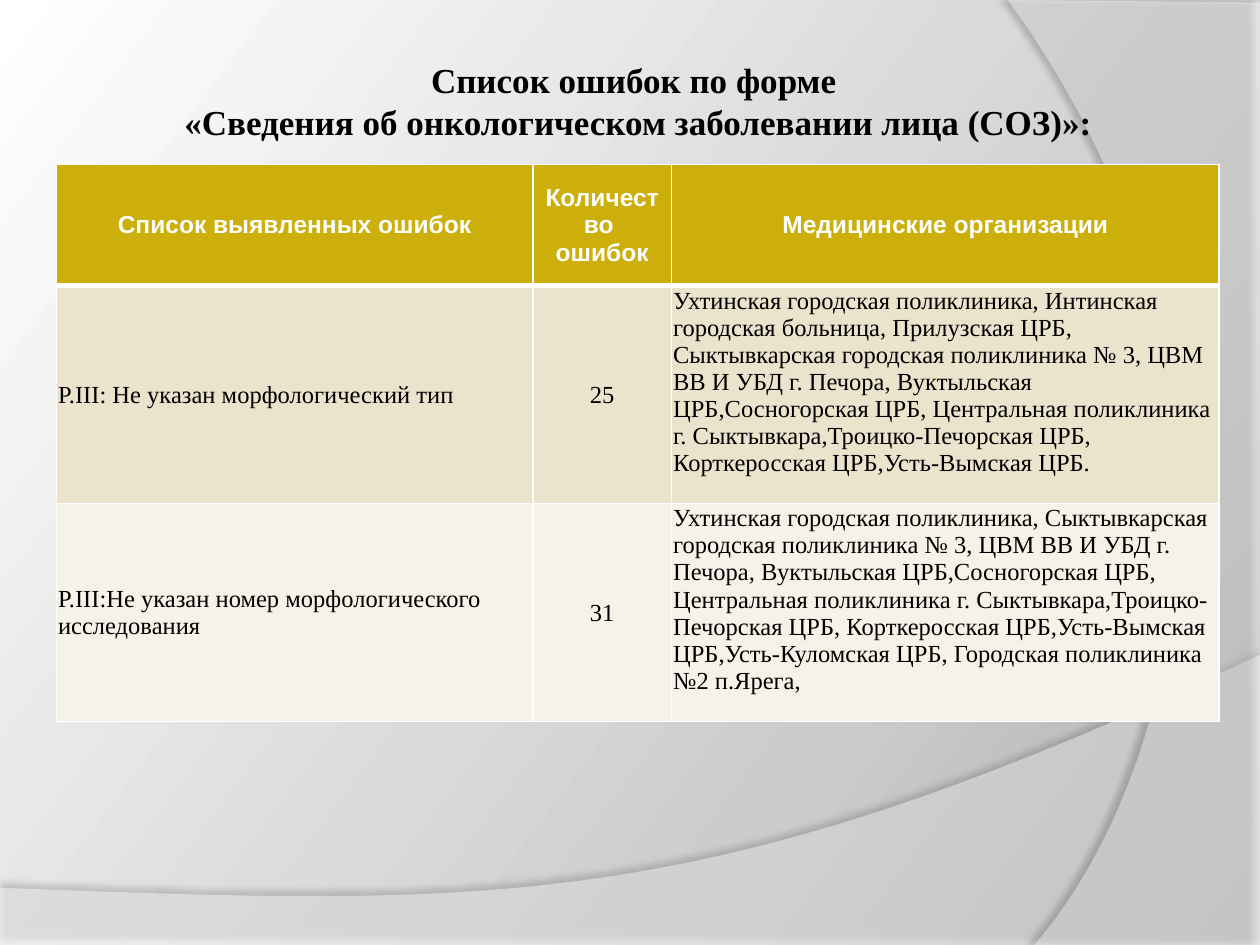
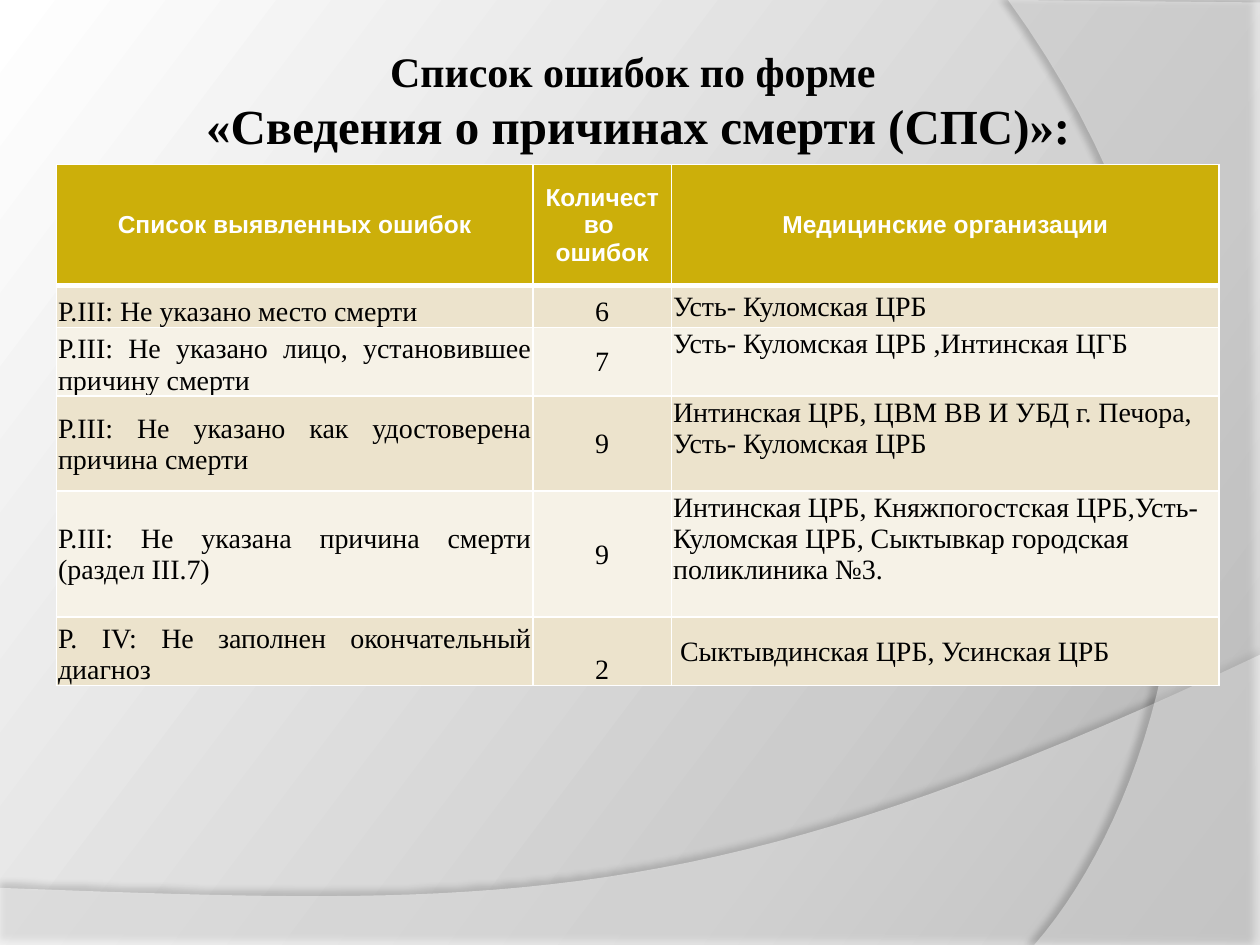
from dataclasses import dataclass
from lxml import etree
from pptx import Presentation
from pptx.dml.color import RGBColor
from pptx.enum.text import MSO_ANCHOR as Anchor, PP_ALIGN as Align
from pptx.oxml import parse_xml
from pptx.oxml.ns import nsdecls, qn
from pptx.util import Cm, Pt


@dataclass(frozen=True)
class Theme:
    serif: str = "Times New Roman"
    sans: str = "Arial"
    ink: str = "000000"
    white: str = "FFFFFF"
    header: str = "CCAF0A"
    stripes: tuple = ("ECE3CC", "F6F2E7")
    backdrop: tuple = ((0, "ABABAB"), (30, "CCCCCC"), (100, "FFFFFF"))
    backdrop_angle: int = 217
    header_size: int = 14
    thin: int = 1
    thick: int = 3


HEADINGS = ("Список выявленных ошибок", "Количество \nошибок", "Медицинские организации")
COLUMNS = (9.6, 2.8, 11.04)
HEADER_HEIGHT = 2.44
TOP, MID, LOW = Anchor.TOP, Anchor.MIDDLE, Anchor.BOTTOM


def bezier(start, first, second, end, steps=40):
    for i in range(1, steps + 1):
        t = i / steps
        u = 1 - t
        yield tuple(u**3 * a + 3 * u * u * t * b + 3 * u * t * t * c + t**3 * d
                    for a, b, c, d in zip(start, first, second, end))


class Deck:
    def __init__(self, theme):
        self.theme = theme
        self.prs = Presentation()
        self.prs.slide_width, self.prs.slide_height = Cm(25.4), Cm(19.05)
        self.slide = None

    def new_slide(self):
        self.slide = self.prs.slides.add_slide(self.prs.slide_layouts[6])
        self.gradient()
        self.wave([(0, 17.9), (0, 19.07), (25.4, 19.07), (25.4, 13.2)],
                  [(14.2, 18.52), (9.93, 18.26), (0, 17.9)], 45, (35, 3.5, 270))
        self.wave([(25.4, 0.05), (25.4, 19.05), (20.85, 19.05)],
                  [(23.75, 15.72), (25.86, 7.62), (20.32, 0)], 40, (45, 4, 180))

    def gradient(self):
        fill = self.slide.background.fill
        fill.gradient()
        stops = "".join(f'<a:gs pos="{pos * 1000}"><a:srgbClr val="{color}"/></a:gs>'
                        for pos, color in self.theme.backdrop)
        grad = next(self.slide.background._cSld.iter(qn("a:gradFill")))
        for child in list(grad):
            grad.remove(child)
        grad.append(parse_xml(f'<a:gsLst {nsdecls("a")}>{stops}</a:gsLst>'))
        etree.SubElement(grad, qn("a:lin"), ang=str(self.theme.backdrop_angle * 60000), scaled="0")

    def wave(self, corners, curve, opacity, shadow):
        outline = [(Cm(x), Cm(y)) for x, y in corners + list(bezier(corners[-1], *curve))]
        builder = self.slide.shapes.build_freeform(*outline[0])
        builder.add_line_segments(outline[1:], close=True)
        sheet = builder.convert_to_shape()
        sheet.fill.solid()
        sheet.fill.fore_color.rgb = RGBColor.from_string(self.theme.white)
        sheet.line.fill.background()
        properties = sheet._element.spPr
        color = next(properties.iter(qn("a:srgbClr")))
        etree.SubElement(color, qn("a:alpha"), val=str(opacity * 1000))
        strength, distance, angle = shadow
        properties.append(parse_xml(
            f'<a:effectLst {nsdecls("a")}><a:outerShdw blurRad="{Pt(4)}" dist="{Pt(distance)}" '
            f'dir="{angle * 60000}" algn="ctr" rotWithShape="0"><a:srgbClr val="{self.theme.ink}">'
            f'<a:alpha val="{strength * 1000}"/></a:srgbClr></a:outerShdw></a:effectLst>'))

    def style(self, run, size, font, color, bold):
        run.font.size, run.font.name, run.font.bold = Pt(size), font, bold
        run.font.color.rgb = RGBColor.from_string(color)

    def title(self, lines, sizes):
        frame = self.slide.shapes.add_textbox(Cm(2.49), Cm(1.12), Cm(20.75), Cm(1.8)).text_frame
        frame.word_wrap = True
        frame.vertical_anchor = MID
        frame.margin_left = frame.margin_right = frame.margin_top = frame.margin_bottom = Cm(0.13)
        heading = frame.paragraphs[0]
        heading.text = "\v".join(lines)
        heading.alignment = Align.CENTER
        for run, size in zip(heading.runs, sizes):
            self.style(run, size, self.theme.serif, self.theme.ink, True)

    def borders(self, cell, bottom):
        properties = cell._tc.get_or_add_tcPr()
        widths = {"lnL": self.theme.thin, "lnR": self.theme.thin, "lnT": self.theme.thin, "lnB": bottom}
        for index, (side, width) in enumerate(widths.items()):
            properties.insert(index, parse_xml(
                f'<a:{side} {nsdecls("a")} w="{Pt(width)}"><a:solidFill>'
                f'<a:srgbClr val="{self.theme.white}"/></a:solidFill></a:{side}>'))

    def cell(self, cell, text, fill, anchor, align, size, font, color, bold=False, bottom=1):
        cell.fill.solid()
        cell.fill.fore_color.rgb = RGBColor.from_string(fill)
        cell.vertical_anchor = anchor
        cell.text_frame.text = text
        for paragraph in cell.text_frame.paragraphs:
            paragraph.alignment = align
            for run in paragraph.runs:
                self.style(run, size, font, color, bold)
        self.borders(cell, bottom)

    def error_table(self, errors, size):
        theme = self.theme
        heights = [HEADER_HEIGHT] + [height for height, *_ in errors]
        table = self.slide.shapes.add_table(len(heights), len(COLUMNS), Cm(1.14), Cm(3.32),
                                            Cm(sum(COLUMNS)), Cm(sum(heights))).table
        for column, width in zip(table.columns, COLUMNS):
            column.width = Cm(width)
        for row, height in zip(table.rows, heights):
            row.height = Cm(height)
        for col, heading in enumerate(HEADINGS):
            self.cell(table.cell(0, col), heading, theme.header, MID, Align.CENTER,
                      theme.header_size, theme.sans, theme.white, True, theme.thick)
        for row, (_, anchors, label_align, *texts) in enumerate(errors, 1):
            fill = theme.stripes[(row - 1) % 2]
            aligns = (label_align, Align.CENTER, Align.LEFT)
            for col, (text, anchor, align) in enumerate(zip(texts, anchors, aligns)):
                cell = table.cell(row, col)
                cell.margin_left = cell.margin_right = cell.margin_top = Cm(0.03)
                cell.margin_bottom = 0
                self.cell(cell, text, fill, anchor, align, size, theme.serif, theme.ink)


CANCER_ERRORS = [
    (4.39, (MID, MID, TOP), Align.JUSTIFY, "P.III: Не указан морфологический тип", "25",
     "Ухтинская городская поликлиника, Интинская городская больница, Прилузская ЦРБ, "
     "Сыктывкарская городская поликлиника № 3, ЦВМ ВВ И УБД г. Печора, Вуктыльская "
     "ЦРБ,Сосногорская ЦРБ, Центральная поликлиника г. Сыктывкара,Троицко-Печорская ЦРБ, "
     "Корткеросская ЦРБ,Усть-Вымская ЦРБ."),
    (4.39, (MID, MID, TOP), Align.LEFT, "P.III:Не указан номер морфологического исследования", "31",
     "Ухтинская городская поликлиника, Сыктывкарская городская поликлиника № 3, ЦВМ ВВ И УБД г. "
     "Печора, Вуктыльская ЦРБ,Сосногорская ЦРБ, Центральная поликлиника г. "
     "Сыктывкара,Троицко-Печорская ЦРБ, Корткеросская ЦРБ,Усть-Вымская ЦРБ,Усть-Куломская ЦРБ, "
     "Городская поликлиника №2 п.Ярега,"),
]
DEATH_ERRORS = [
    (0.84, (LOW, LOW, MID), Align.JUSTIFY, "P.III: Не указано место смерти", "6", "Усть- Куломская ЦРБ"),
    (1.27, (LOW, MID, TOP), Align.JUSTIFY, "P.III: Не указано лицо, установившее причину смерти", "7",
     "Усть- Куломская ЦРБ ,Интинская ЦГБ"),
    (1.91, (MID, MID, TOP), Align.JUSTIFY, "P.III: Не указано как удостоверена причина смерти ", "9",
     "Интинская ЦРБ, ЦВМ ВВ И УБД г. Печора, Усть- Куломская ЦРБ"),
    (2.54, (MID, MID, TOP), Align.JUSTIFY, "P.III: Не указана причина смерти (раздел III.7)", "9",
     "Интинская ЦРБ, Княжпогостская ЦРБ,Усть- Куломская ЦРБ, Сыктывкар городская поликлиника №3."),
    (1.28, (LOW, LOW, MID), Align.JUSTIFY, "P. IV: Не заполнен окончательный диагноз", "2",
     " Сыктывдинская ЦРБ, Усинская ЦРБ"),
]
FORMS = [
    ("«Сведения об онкологическом заболевании лица (СОЗ)»:", (20, 20), CANCER_ERRORS, 14),
    ("«Сведения о причинах смерти (СПС)»:", (24, 28), DEATH_ERRORS, 16),
]


def main():
    deck = Deck(Theme())
    for form, title_sizes, errors, body_size in FORMS:
        deck.new_slide()
        deck.title(("Список ошибок по форме ", form), title_sizes)
        deck.error_table(errors, body_size)
    deck.prs.save("out.pptx")


if __name__ == "__main__":
    main()
